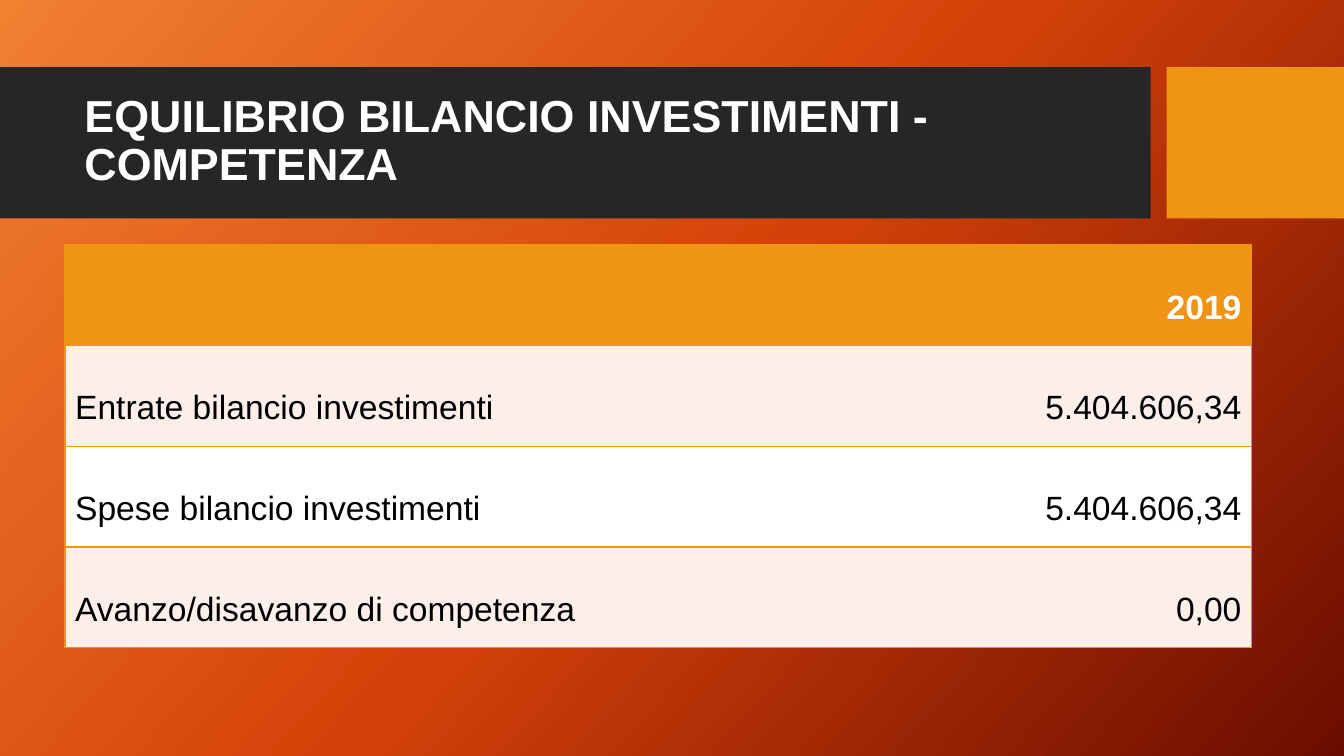
from copy import deepcopy

from lxml import etree
from pptx import Presentation
from pptx.dml.color import RGBColor
from pptx.enum.shapes import MSO_SHAPE
from pptx.enum.text import MSO_ANCHOR, PP_ALIGN
from pptx.oxml.ns import qn
from pptx.util import Pt

RECTANGLE = MSO_SHAPE.RECTANGLE
MIDDLE = MSO_ANCHOR.MIDDLE
LEFT, RIGHT = PP_ALIGN.LEFT, PP_ALIGN.RIGHT

CHARCOAL = RGBColor(0x26, 0x26, 0x26)
AMBER = RGBColor(0xF0, 0x94, 0x15)
BLUSH = RGBColor(0xFC, 0xEE, 0xE8)
WHITE = RGBColor(0xFF, 0xFF, 0xFF)
BLACK = RGBColor(0x00, 0x00, 0x00)
FLAME = RGBColor(0xF1, 0x80, 0x31)
EMBER = RGBColor(0xD5, 0x42, 0x09)
MAROON = RGBColor(0x6A, 0x0D, 0x00)

FONT = "Arial"
PX = 9525
PLAIN_TABLE = "{2D5ABB26-0587-4C30-8999-92F81FD0307C}"


class SlideBuilder:
    def __init__(self, slide):
        self.slide = slide

    def background(self, colours, angle):
        fill = self.slide.background.fill
        fill.gradient()
        fill.gradient_angle = 360 - angle
        stop_list = self.slide.element.find(".//" + qn("a:gsLst"))
        stop_list.insert(1, deepcopy(stop_list[0]))
        for index, (stop, colour) in enumerate(zip(fill.gradient_stops, colours)):
            stop.color.rgb = colour
            stop.position = index / (len(colours) - 1)

    def block(self, left, top, width, height, colour):
        block = self.slide.shapes.add_shape(
            RECTANGLE, left * PX, top * PX, width * PX, height * PX)
        block.shadow.inherit = False
        block.fill.solid()
        block.fill.fore_color.rgb = colour
        block.line.fill.background()

    def set_text(self, frame, text, size, colour, bold, align=LEFT):
        frame.text = text
        frame.word_wrap = True
        paragraph = frame.paragraphs[0]
        paragraph.alignment = align
        for run in paragraph.runs:
            run.font.name = FONT
            run.font.size = Pt(size)
            run.font.bold = bold
            run.font.color.rgb = colour
        return paragraph

    def title(self, left, top, width, height, text):
        box = self.slide.shapes.add_textbox(
            left * PX, top * PX, width * PX, height * PX)
        heading = self.set_text(box.text_frame, text, 32, WHITE, True)
        heading.line_spacing = 0.9
        box.text_frame.vertical_anchor = MIDDLE

    def border(self, cell, sides):
        properties = cell._tc.get_or_add_tcPr()
        for side in sides:
            line = etree.SubElement(properties, qn("a:ln" + side), w=str(Pt(1)))
            solid = etree.SubElement(line, qn("a:solidFill"))
            etree.SubElement(solid, qn("a:srgbClr"), val=str(AMBER))

    def table(self, left, top, widths, row_height, rows):
        frame = self.slide.shapes.add_table(
            len(rows), len(widths), left * PX, top * PX,
            sum(widths) * PX, row_height * len(rows) * PX)
        table = frame.table
        table._tbl.tblPr.find(qn("a:tableStyleId")).text = PLAIN_TABLE
        for column, width in zip(table.columns, widths):
            column.width = width * PX
        for row_index, values in enumerate(rows):
            table.rows[row_index].height = row_height * PX
            is_header = row_index == 0
            band = AMBER if is_header else (WHITE, BLUSH)[row_index % 2]
            for column_index, value in enumerate(values):
                cell = table.cell(row_index, column_index)
                cell.margin_top = 42 * PX
                self.border(cell, "RTB" if column_index else "LTB")
                cell.fill.solid()
                cell.fill.fore_color.rgb = band
                self.set_text(cell.text_frame, value, 24,
                              WHITE if is_header else BLACK, is_header,
                              RIGHT if column_index else LEFT)


def main():
    deck = Presentation()
    deck.slide_width, deck.slide_height = 1280 * PX, 720 * PX
    builder = SlideBuilder(deck.slides.add_slide(deck.slide_layouts[6]))
    builder.background([FLAME, EMBER, MAROON], 42)
    builder.block(0, 64, 1096, 144, CHARCOAL)
    builder.block(1111, 64, 169, 144, AMBER)
    builder.title(71, 79, 1009, 113,
                  "EQUILIBRIO BILANCIO INVESTIMENTI - COMPETENZA")
    builder.table(62, 233, [661, 469], 96, [
        ["", "2019"],
        ["Entrate bilancio investimenti", "5.404.606,34"],
        ["Spese bilancio investimenti", "5.404.606,34"],
        ["Avanzo/disavanzo di competenza", "0,00"],
    ])
    deck.save("out.pptx")


if __name__ == "__main__":
    main()
